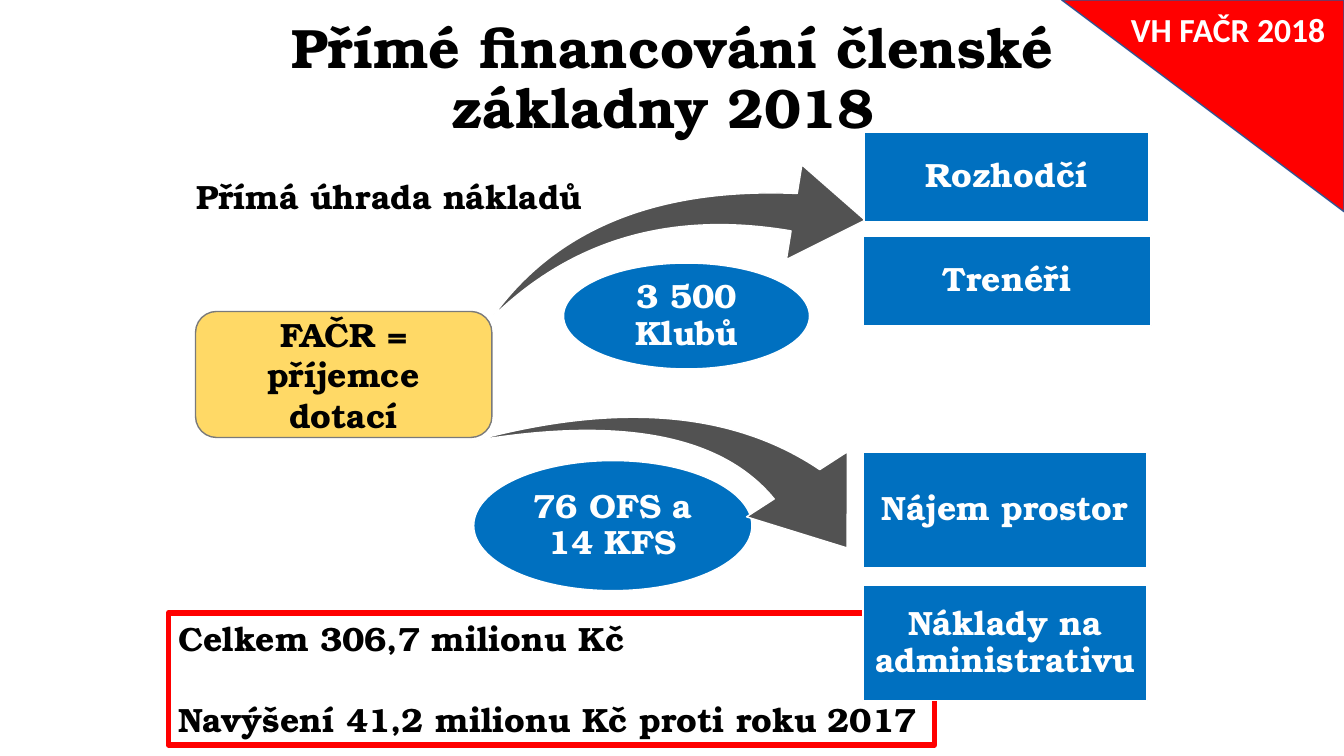
from pptx import Presentation
from pptx.dml.color import RGBColor
from pptx.enum.shapes import MSO_SHAPE
from pptx.enum.text import MSO_ANCHOR, PP_ALIGN
from pptx.util import Inches, Pt

WIDTH, HEIGHT = Inches(13.333), Inches(7.5)
BODY_FONT, TAG_FONT = "TeX Gyre Bonum", "Calibri"
BODY_SIZE = 24
LEFT, CENTER = PP_ALIGN.LEFT, PP_ALIGN.CENTER
TOP, MIDDLE, BOTTOM = MSO_ANCHOR.TOP, MSO_ANCHOR.MIDDLE, MSO_ANCHOR.BOTTOM
RECTANGLE, ELLIPSE = MSO_SHAPE.RECTANGLE, MSO_SHAPE.OVAL
ROUNDED_BOX = MSO_SHAPE.FLOWCHART_ALTERNATE_PROCESS
SWOOSH, CORNER = MSO_SHAPE.SWOOSH_ARROW, MSO_SHAPE.RIGHT_TRIANGLE

COLORS = {
    "blue": "0070C0",
    "yellow": "FFD966",
    "red": "FF0000",
    "arrow": "525252",
    "gray": "7A7A7A",
    "navy": "325491",
    "white": "FFFFFF",
    "black": "000000",
}


def color(name):
    return RGBColor.from_string(COLORS[name])


def place(left, top, width, height):
    """Turn percentages of the slide's size into lengths."""
    return (int(WIDTH * left / 100), int(HEIGHT * top / 100),
            int(WIDTH * width / 100), int(HEIGHT * height / 100))


def add_figure(slide, kind, area, fill, line, line_width=1, rotation=0):
    shape = slide.shapes.add_shape(kind, *place(*area))
    shape.shadow.inherit = False
    shape.rotation = rotation
    if fill:
        shape.fill.solid()
        shape.fill.fore_color.rgb = color(fill)
    else:
        shape.fill.background()
    shape.line.color.rgb = color(line)
    shape.line.width = Pt(line_width)
    return shape


def add_label(slide, area):
    return slide.shapes.add_textbox(*place(*area))


def write(shape, lines, ink, size=BODY_SIZE, font=BODY_FONT, align=CENTER,
          anchor=MIDDLE, inset=(0.1, 0.05), spacing=0.9, gap=0, wrap=True):
    """Fill a shape with one paragraph per line, gap points apart."""
    frame = shape.text_frame
    frame.word_wrap = wrap
    frame.vertical_anchor = anchor
    frame.margin_left = frame.margin_right = Inches(inset[0])
    frame.margin_top = frame.margin_bottom = Inches(inset[1])
    for index, line in enumerate(lines):
        paragraph = frame.add_paragraph() if index else frame.paragraphs[0]
        paragraph.alignment = align
        paragraph.line_spacing = spacing
        if index:
            paragraph.space_before = Pt(gap)
        run = paragraph.add_run()
        run.text = line
        run.font.name = font
        run.font.size = Pt(size)
        run.font.bold = True
        run.font.color.rgb = color(ink)


def add_blue_figure(slide, kind, area, text, inset):
    shape = add_figure(slide, kind, area, "blue", "white")
    write(shape, [text], "white", inset=(inset, inset))


def add_swoosh(slide, area, rotation):
    arrow = add_figure(slide, SWOOSH, area, "arrow", "white", rotation=rotation)
    arrow.adjustments[0] = 0.163
    arrow.adjustments[1] = 0.314


def add_summary(slide):
    frame = add_figure(slide, RECTANGLE, (12.53, 81.07, 57, 17.47), None, "red", 4)
    write(frame,
          ["Celkem 306,7 milionu Kč", "Navýšení 41,2 milionu Kč proti roku 2017"],
          "black", align=LEFT, anchor=TOP, spacing=1, gap=28.8)


def add_corner_tag(slide):
    add_figure(slide, CORNER, (79, 0, 21, 28), "red", "navy", rotation=180)
    tag = add_label(slide, (83.4, 0.53, 16.6, 6.67))
    write(tag, ["VH FAČR 2018"], "white", font=TAG_FONT, align=LEFT,
          anchor=TOP, spacing=1, wrap=False)


def main():
    presentation = Presentation()
    presentation.slide_width, presentation.slide_height = WIDTH, HEIGHT
    slide = presentation.slides.add_slide(presentation.slide_layouts[6])

    recipient = add_figure(slide, ROUNDED_BOX, (14.55, 41.2, 22.05, 16.67),
                           "yellow", "gray")
    write(recipient, ["FAČR = příjemce dotací"], "black", spacing=1)

    add_blue_figure(slide, ELLIPSE, (41.93, 34.8, 18.3, 14), "3 500 Klubů", 0)
    add_blue_figure(slide, ELLIPSE, (35.25, 60.93, 20.7, 17.2),
                    "76 OFS a 14 KFS", 0.03)
    add_swoosh(slide, (38.48, 18, 24.75, 30.53), 15.7)

    payment = add_label(slide, (13.8, 21.73, 30.3, 7.2))
    write(payment, ["Přímá úhrada nákladů"], "black", anchor=BOTTOM,
          inset=(0.02, 0.02))
    title = add_label(slide, (12.53, 2.27, 75, 16.67))
    write(title, ["Přímé financování členské základny 2018 "], "black", size=39.6)

    add_swoosh(slide, (40.8, 42.27, 19.5, 43.73), 63.6)
    add_summary(slide)

    costs = [
        ("Rozhodčí", (64.28, 17.47, 21.23, 11.87)),
        ("Trenéři", (64.2, 31.2, 21.45, 11.87)),
        ("Nájem prostor", (64.2, 59.87, 21.15, 15.2)),
        ("Náklady na administrativu", (64.2, 77.47, 21.15, 15.2)),
    ]
    for text, area in costs:
        add_blue_figure(slide, RECTANGLE, area, text, 0.1)

    add_corner_tag(slide)
    presentation.save("out.pptx")


if __name__ == "__main__":
    main()
